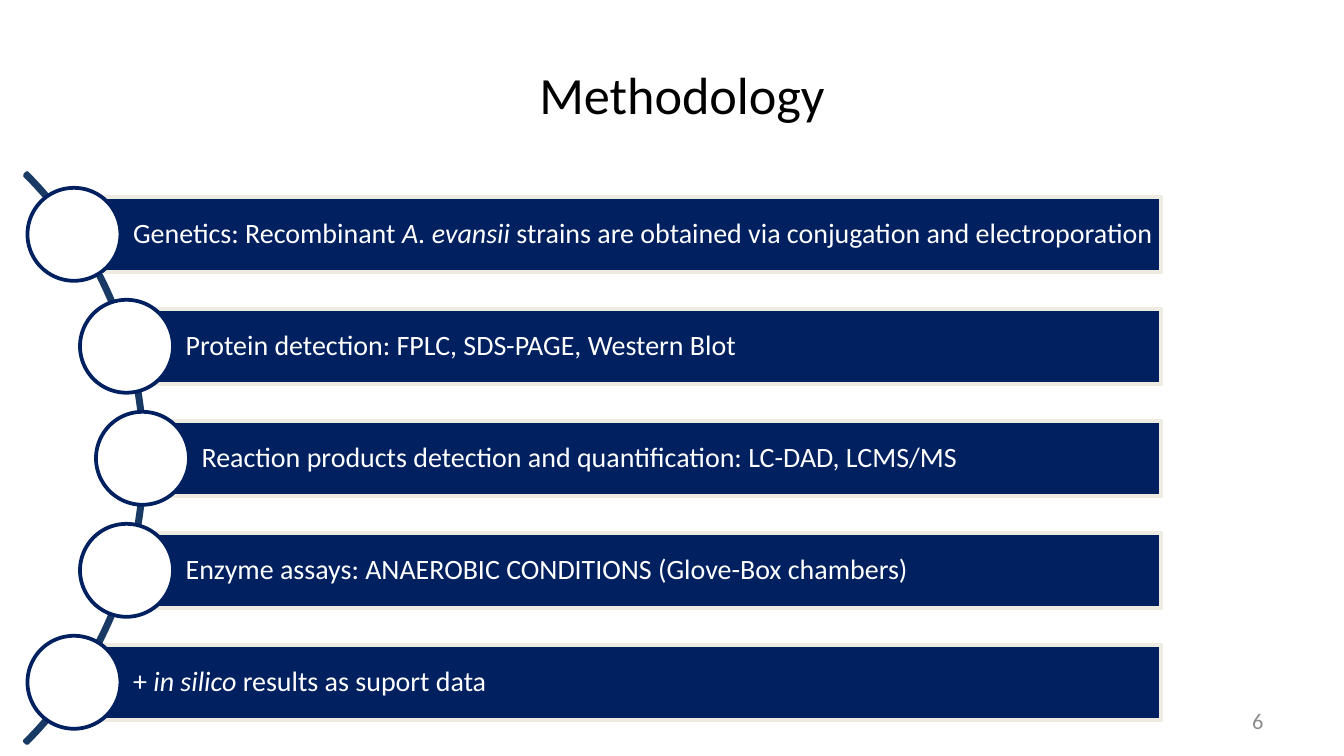
from math import sqrt
from pptx import Presentation
from pptx.dml.color import RGBColor
from pptx.enum.shapes import MSO_SHAPE as Shape
from pptx.enum.text import MSO_ANCHOR as Anchor, PP_ALIGN as Align
from pptx.util import Inches, Pt

NAVY = RGBColor(0x00, 0x20, 0x60)
STEEL = RGBColor(0x19, 0x3A, 0x64)
CREAM = RGBColor(0xEE, 0xEC, 0xE1)
WHITE = RGBColor(0xFF, 0xFF, 0xFF)
BLACK = RGBColor(0x00, 0x00, 0x00)
GREY = RGBColor(0x8C, 0x8C, 0x8C)

WIDE = 10
HIGH = WIDE * 9 / 16
ROW = WIDE / 12           # distance between bars
MID = 3.41                # height of the middle bar and of the arc's centre
BAR = ROW * 0.67
DOT = ROW * 0.83
RIGHT = 8.64              # right edge of all bars
HUB = -1.92               # centre of the arc
REACH = 3                 # outer radius of the arc

# Each step is a list of (text, italic) runs.
STEPS = [
    [("Genetics: Recombinant ", False), ("A. evansii ", True),
     ("strains are obtained via conjugation and electroporation", False)],
    [("Protein detection: FPLC, SDS-PAGE, Western Blot", False)],
    [("Reaction products detection and quantification: LC-DAD, LCMS/MS", False)],
    [("Enzyme assays: ANAEROBIC CONDITIONS (Glove-Box chambers)", False)],
    [("+ ", False), ("in silico ", True), ("results as suport data", False)],
]

deck = Presentation()
deck.slide_width, deck.slide_height = Inches(WIDE), Inches(HIGH)
slide = deck.slides.add_slide(deck.slide_layouts[6])


def draw(kind, x, y, w, h, fill, line):
    item = slide.shapes.add_shape(kind, Inches(x), Inches(y), Inches(w), Inches(h))
    item.shadow.inherit = False
    if fill is None:
        item.fill.background()
    else:
        item.fill.solid()
        item.fill.fore_color.rgb = fill
    item.line.color.rgb = line
    item.line.width = Pt(2)
    return item


def style(run, size, color):
    run.font.name = "Calibri"
    run.font.size = Pt(size)
    run.font.color.rgb = color


# Slide number and title
for text, x, y, w, h, size, color, align in [
    ("6", 7.17, 5.21, 2.33, 0.3, 12, GREY, Align.RIGHT),
    ("Methodology", 1.14, 0.23, 7.87, 0.94, 28, BLACK, Align.CENTER),
]:
    box = slide.shapes.add_textbox(Inches(x), Inches(y), Inches(w), Inches(h))
    frame = box.text_frame
    frame.word_wrap = True
    frame.vertical_anchor = Anchor.MIDDLE
    frame.text = text
    frame.paragraphs[0].alignment = align
    style(frame.paragraphs[0].runs[0], size, color)

# Arc that links the steps
arc = draw(Shape.BLOCK_ARC, HUB - REACH, MID - REACH, 2 * REACH, 2 * REACH,
           None, STEEL)
for i, value in enumerate([189, 27, 0.004]):
    arc.adjustments[i] = value

# Bars start at the centre of their dots, which sit on the arc
for i, step in enumerate(STEPS):
    rise = (i - len(STEPS) // 2) * ROW
    x, y = HUB + sqrt((REACH - 0.02) ** 2 - rise ** 2), MID + rise
    bar = draw(Shape.RECTANGLE, x, y - BAR / 2, RIGHT - x, BAR, NAVY, CREAM)
    frame = bar.text_frame
    frame.word_wrap = True
    frame.vertical_anchor = Anchor.MIDDLE
    frame.margin_left = Inches(0.44)
    frame.margin_right = frame.margin_top = frame.margin_bottom = Inches(0.04)
    line = frame.paragraphs[0]
    line.alignment = Align.LEFT
    line.line_spacing = 0.9
    for text, slant in step:
        run = line.add_run()
        run.text = text
        style(run, 15, WHITE)
        run.font.italic = slant
    draw(Shape.OVAL, x - DOT / 2, y - DOT / 2, DOT, DOT, WHITE, NAVY)

deck.save("out.pptx")
